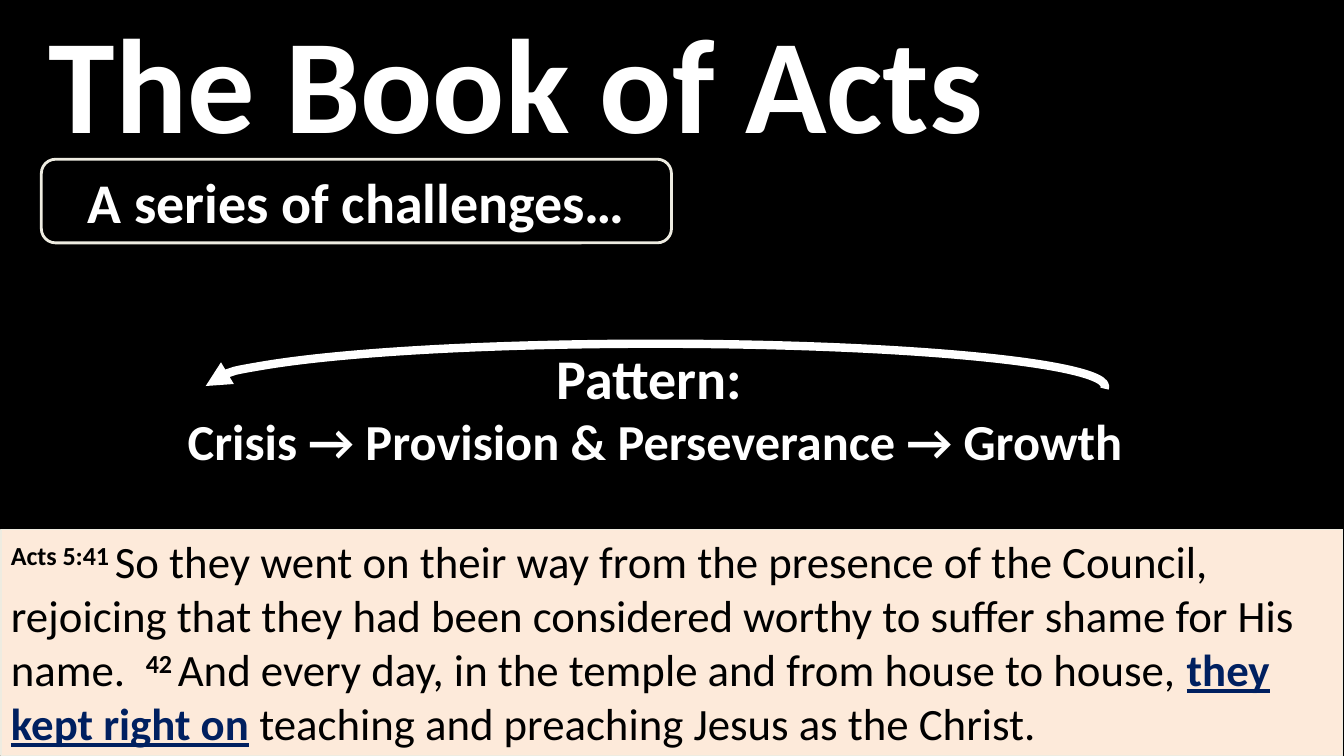
from lxml import etree
from pptx import Presentation
from pptx.dml.color import RGBColor
from pptx.enum.shapes import MSO_SHAPE
from pptx.enum.text import MSO_ANCHOR, PP_ALIGN
from pptx.oxml.ns import qn
from pptx.util import Inches, Pt

RECT = MSO_SHAPE.RECTANGLE
CALLOUT = MSO_SHAPE.ROUNDED_RECTANGULAR_CALLOUT
ARC = MSO_SHAPE.ARC
MIDDLE, TOP = MSO_ANCHOR.MIDDLE, MSO_ANCHOR.TOP
CENTER, LEFT = PP_ALIGN.CENTER, PP_ALIGN.LEFT

BLACK = RGBColor(0x00, 0x00, 0x00)
WHITE = RGBColor(0xFF, 0xFF, 0xFF)
CREAM = RGBColor(0xEE, 0xEC, 0xE1)
PEACH = RGBColor(0xFD, 0xEA, 0xDA)
NAVY = RGBColor(0x00, 0x20, 0x60)

NUMBER = {"bold": True, "base": 30}
STRESS = {"bold": True, "under": True, "color": NAVY}
VERSE = [
    ("Acts 5:41 ", NUMBER),
    ("So they went on their way from the presence of the Council, "
     "rejoicing that they had been considered worthy to suffer shame "
     "for His name.  ", {}),
    ("42 ", NUMBER),
    ("And every day, in the temple and from house to house, ", {}),
    ("they kept right on", STRESS),
    (" teaching and preaching Jesus as the Christ.", {}),
]


def add_run(para, text, size=32, color=BLACK, bold=False, under=False, base=0):
    """Add formatted text; base is the superscript rise in percent."""
    run = para.add_run()
    run.text = text
    font = run.font
    font.name = "Calibri"
    font.size = Pt(size)
    font.bold = bold
    font.color.rgb = color
    if under:
        font.underline = True
    if base:
        font._element.set("baseline", str(base * 1000))


def set_frame(shape, anchor, align, lines):
    """Fill a shape with lines, each a list of (text, format) pairs."""
    frame = shape.text_frame
    frame.word_wrap = True
    frame.vertical_anchor = anchor
    for i, line in enumerate(lines):
        para = frame.add_paragraph() if i else frame.paragraphs[0]
        para.alignment = align
        for text, style in line:
            add_run(para, text, **style)


def head_line(text, size):
    return [(text, {"size": size, "color": WHITE, "bold": True})]


def add_box(slide, kind, box, fill=None, line=None, width=1, adjust=()):
    shape = slide.shapes.add_shape(kind, *map(Inches, box))
    shape.shadow.inherit = False
    for i, value in enumerate(adjust):
        shape.adjustments[i] = value
    if fill is None:
        shape.fill.background()
    else:
        shape.fill.solid()
        shape.fill.fore_color.rgb = fill
    if line is None:
        shape.line.fill.background()
    else:
        shape.line.color.rgb = line
        shape.line.width = Pt(width)
    return shape


def add_arrow(shape):
    """Put a triangle at the start of the shape's outline."""
    line = shape.line._get_or_add_ln()
    etree.SubElement(line, qn("a:headEnd"), type="triangle")


def main():
    prs = Presentation()
    prs.slide_width, prs.slide_height = Inches(13.33), Inches(7.5)
    slide = prs.slides.add_slide(prs.slide_layouts[6])
    slide.background.fill.solid()
    slide.background.fill.fore_color.rgb = BLACK

    title = slide.shapes.add_textbox(*map(Inches, (0.08, 0.17, 10.08, 1.25)))
    set_frame(title, MIDDLE, CENTER, [head_line("The Book of Acts", 96)])

    series = add_box(slide, CALLOUT, (0.41, 1.58, 6.25, 0.83), BLACK, CREAM, 2,
                     (-0.22, 0.5, 0.17))
    set_frame(series, MIDDLE, CENTER,
              [head_line("A series of challenges…", 40)])

    pattern = add_box(slide, RECT, (1.5, 3.25, 10, 1.58), BLACK)
    set_frame(pattern, MIDDLE, CENTER, [
        head_line("Pattern: ", 40),
        head_line("Crisis → Provision & Perseverance → Growth", 36),
    ])

    cycle = add_box(slide, ARC, (2.04, 3.41, 8.92, 0.85), None, WHITE, 6,
                    (108.04, 0.16))
    add_arrow(cycle)

    verse = add_box(slide, RECT, (0.01, 5.25, 13.31, 2.25), PEACH, CREAM, 0.75)
    set_frame(verse, TOP, LEFT, [VERSE])

    prs.save("out.pptx")


if __name__ == "__main__":
    main()
